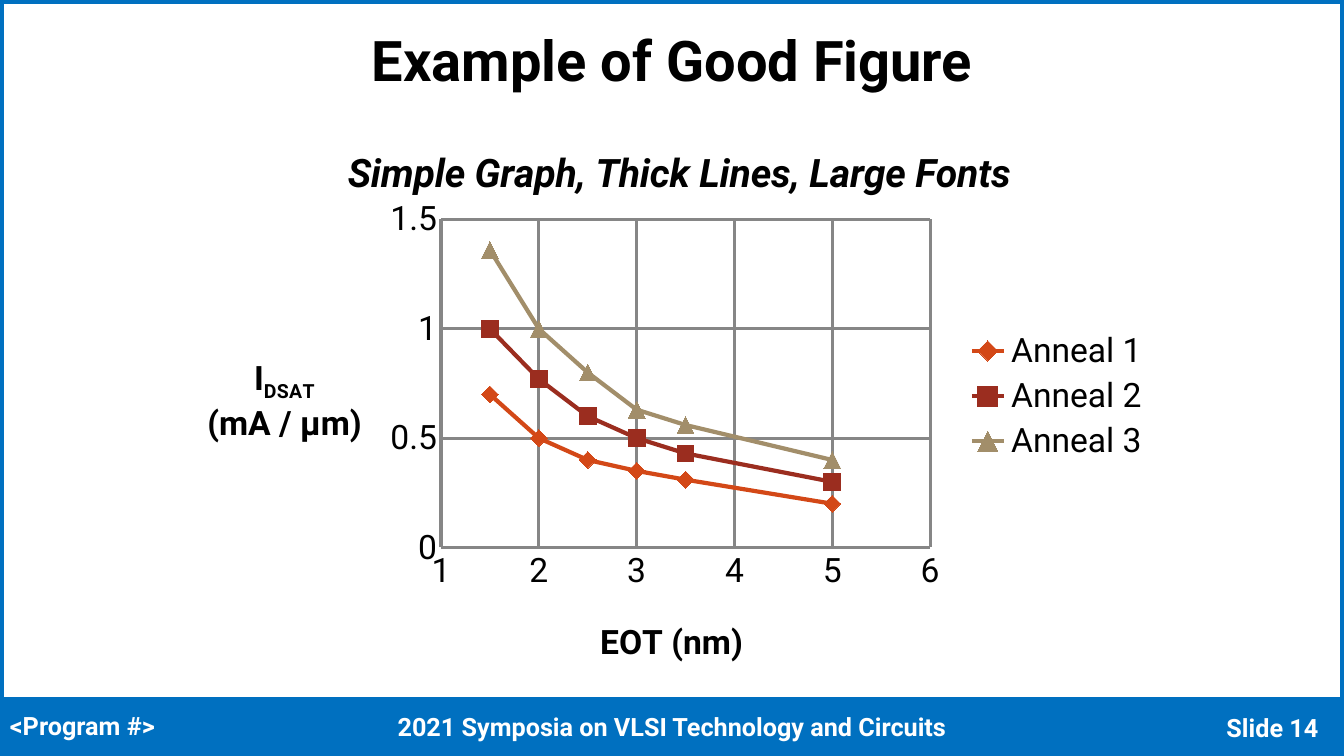
"""Build a slide with a three-series scatter chart of drive current against EOT."""
from lxml import etree
from pptx import Presentation, util as u
from pptx.chart.data import XyChartData
from pptx.dml.color import RGBColor
from pptx.enum import chart as ch, shapes, text
from pptx.oxml.ns import qn

PX = 9525
FONT = "Roboto"
COLORS = {"blue": "0070C0", "white": "FFFFFF", "black": "000000", "grid": "868686",
          "orange": "D34817", "red": "9B2D1F", "tan": "A28E6A"}


def style(font, size, color="black", bold=True, italic=False):
    values = {"name": FONT, "size": u.Pt(size), "bold": bold, "italic": italic}
    for key, value in values.items():
        setattr(font, key, value)
    font.color.rgb = RGBColor.from_string(COLORS[color])


def place(part, index, **fractions):
    for old in part.findall(qn("c:layout")):
        part.remove(old)
    layout = etree.Element(qn("c:layout"))
    manual = etree.SubElement(layout, qn("c:manualLayout"))
    settings = {"xMode": "edge", "yMode": "edge", **fractions}
    if part.tag == qn("c:plotArea"):
        settings = {"layoutTarget": "inner", **settings}
    for key, value in settings.items():
        etree.SubElement(manual, qn(f"c:{key}")).set("val", str(value))
    part.insert(index, layout)


prs = Presentation()
prs.slide_width, prs.slide_height = 1280 * PX, 720 * PX
slide = prs.slides.add_slide(prs.slide_layouts[6])

footer = slide.shapes.add_shape(shapes.MSO_SHAPE.RECTANGLE, 0, 664 * PX, 1280 * PX, 56 * PX)
footer.fill.solid()
footer.fill.fore_color.rgb = RGBColor.from_string(COLORS["blue"])
footer.line.fill.background()
frame = slide.shapes.add_shape(shapes.MSO_SHAPE.RECTANGLE, 0, 0, 1280 * PX, 720 * PX)
frame.fill.background()
frame.line.color.rgb = RGBColor.from_string(COLORS["blue"])
frame.line.width = u.Pt(6)
for band in (footer, frame):
    band.shadow.inherit = False

LABELS = [
    ("Example of Good Figure", (21, 24, 1238, 64), "CENTER", 40, "black"),
    ("2021 Symposia on VLSI Technology and Circuits", (192, 673, 896, 38), "CENTER", 18, "white"),
    ("Slide 14", (923, 674, 342, 38), "RIGHT", 18, "white"),
    ("<Program #>", (0, 672, 400, 38), "LEFT", 18, "white"),
]
for words, box, align, size, color in LABELS:
    label = slide.shapes.add_textbox(*(n * PX for n in box)).text_frame
    label.word_wrap = True
    label.vertical_anchor = text.MSO_ANCHOR.MIDDLE
    line = label.paragraphs[0]
    line.alignment = text.PP_ALIGN[align]
    run = line.add_run()
    run.text = words
    style(run.font, size, color)

EOT = [1.5, 2, 2.5, 3, 3.5, 5]
ANNEALS = [
    ("Anneal 1", [0.7, 0.5, 0.4, 0.35, 0.31, 0.2], "orange", "DIAMOND"),
    ("Anneal 2", [1, 0.77, 0.6, 0.5, 0.43, 0.3], "red", "SQUARE"),
    ("Anneal 3", [1.36, 1, 0.8, 0.63, 0.56, 0.4], "tan", "TRIANGLE"),
]
data = XyChartData()
for name, currents, _, _ in ANNEALS:
    series = data.add_series(name)
    for eot, current in zip(EOT, currents):
        series.add_data_point(eot, current)
chart = slide.shapes.add_chart(ch.XL_CHART_TYPE.XY_SCATTER_LINES, 176 * PX, 112 * PX,
                               928 * PX, 536 * PX, data).chart
style(chart.font, 24, bold=False)
chart.plots[0].vary_by_categories = False
for series, (_, _, color, symbol) in zip(chart.plots[0].series, ANNEALS):
    rgb = RGBColor.from_string(COLORS[color])
    series.smooth = False
    series.format.line.width = u.Pt(3)
    series.format.line.color.rgb = rgb
    series.marker.style = ch.XL_MARKER_STYLE[symbol]
    series.marker.size = 12
    series.marker.format.fill.solid()
    series.marker.format.fill.fore_color.rgb = rgb
    series.marker.format.line.color.rgb = rgb

AXES = [(chart.category_axis, 1, 6, 1), (chart.value_axis, 0, 1.5, 0.5)]
for axis, low, high, step in AXES:
    settings = {"minimum_scale": low, "maximum_scale": high, "major_unit": step,
                "has_major_gridlines": True, "major_tick_mark": ch.XL_TICK_MARK.NONE,
                "minor_tick_mark": ch.XL_TICK_MARK.NONE}
    for key, value in settings.items():
        setattr(axis, key, value)
    axis.tick_labels.number_format = "General"
    axis.tick_labels.number_format_is_linked = False
    style(axis.tick_labels.font, 24, bold=False)
    for rule in (axis.major_gridlines.format.line, axis.format.line):
        rule.width = u.Pt(2.25)
        rule.color.rgb = RGBColor.from_string(COLORS["grid"])

chart.has_title = True
TITLES = [
    (chart.chart_title, [["Simple Graph, Thick Lines, Large Fonts"]], 28, True, 0.16, 0.04),
    (chart.category_axis.axis_title, [["EOT (nm)"]], 24, False, 0.42, 0.88),
    (chart.value_axis.axis_title, [["I", "DSAT"], ["(mA / µm)"]], 24, False, 0.02, 0.42),
]
for title, lines, size, italic, x, y in TITLES:
    body = title.text_frame
    for number, pieces in enumerate(lines):
        line = body.add_paragraph() if number else body.paragraphs[0]
        line.alignment = text.PP_ALIGN.CENTER
        style(line.font, size, italic=italic)
        for piece in pieces:
            run = line.add_run()
            run.text = piece
            style(run.font, size, italic=italic)
            if piece == "DSAT":
                run.font._element.set("baseline", "-25000")
    body._txBody.bodyPr.set("rot", "0")
    body._txBody.bodyPr.set("vert", "horz")
    place(title._element, 1, x=x, y=y)

chart.has_legend = True
chart.legend.position = ch.XL_LEGEND_POSITION.RIGHT
chart.legend.include_in_layout = False
style(chart.legend.font, 24, bold=False)
place(chart.legend._element, 1, x=0.8, y=0.37, w=0.19, h=0.25)
place(chart._chartSpace.chart.plotArea, 0, x=0.263, y=0.181, w=0.502, h=0.583)

prs.save("out.pptx")
